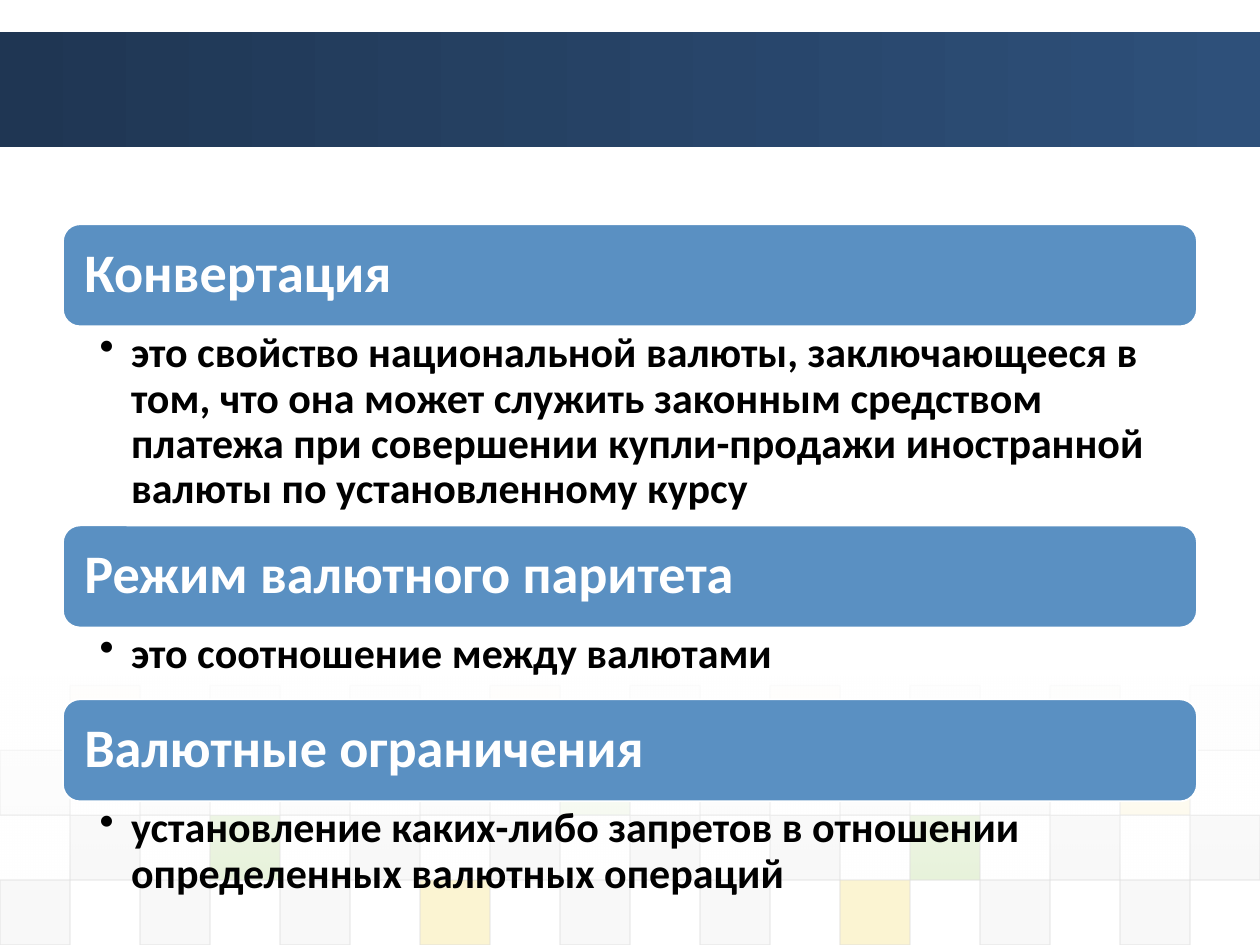
"""Build a slide defining three currency terms over a tiled background."""
from dataclasses import dataclass

from lxml.etree import SubElement
from pptx import Presentation
from pptx.dml.color import RGBColor
from pptx.enum.shapes import MSO_SHAPE as Preset
from pptx.enum.text import MSO_ANCHOR as Anchor, PP_ALIGN as Align
from pptx.oxml.ns import qn
from pptx.util import Inches, Pt

WIDTH, HEIGHT = 10, 7.5
COLORS = {
    "band_start": "1F3653", "band_end": "2E507A", "heading": "5A90C2",
    "white": "FFFFFF", "black": "000000", "edge": "DDDDDD",
    "D": "DDDDDD", "E": "EAEAEA", "G": "8AC246", "Y": "EFC821",
}
FONT = "Calibri"
TILE_COLUMNS = 18
TILE_WIDTH, TILE_HEIGHT = WIDTH / TILE_COLUMNS, 0.515
LEFT, TERM_WIDTH, HEADING_HEIGHT = WIDTH * 0.05, WIDTH * 0.9, 0.81


@dataclass
class TileRow:
    first_column: int
    opacity: int
    tints: str


@dataclass
class Term:
    top: float
    heading: str
    definition: str
    definition_height: float


TILE_ROWS = [
    TileRow(1, 5, "YEEYDYEGE"),
    TileRow(0, 10, "DDDDGDDDY"),
    TileRow(1, 20, "DGDDDDGDD"),
    TileRow(0, 20, "DDDYDDYDD"),
]
TERMS = [
    Term(1.78, "Конвертация",
         "это свойство национальной валюты, заключающееся в том, что она может "
         "служить законным средством платежа при совершении купли-продажи "
         "иностранной валюты по установленному курсу", 1.58),
    Term(4.17, "Режим валютного паритета", "это соотношение между валютами", 0.56),
    Term(5.55, "Валютные ограничения",
         "установление каких-либо запретов в отношении определенных валютных "
         "операций", 0.82),
]


def rgb(name: str) -> RGBColor:
    return RGBColor.from_string(COLORS[name])


def add_block(slide, preset, left: float, top: float, width: float, height: float):
    block = slide.shapes.add_shape(
        preset, Inches(left), Inches(top), Inches(width), Inches(height))
    block.shadow.inherit = False
    return block


def set_opacities(block, *percents: int) -> None:
    for color, percent in zip(block.element.spPr.iter(qn("a:srgbClr")), percents):
        SubElement(color, qn("a:alpha"), val=str(percent * 1000))


def add_gradient(slide, top: float, height: float, names: tuple[str, str], angle: int):
    block = add_block(slide, Preset.RECTANGLE, 0, top, WIDTH, height)
    block.line.fill.background()
    block.fill.gradient()
    block.fill.gradient_angle = angle
    for stop, name, position in zip(block.fill.gradient_stops, names, (0, 1)):
        stop.color.rgb = rgb(name)
        stop.position = position
    return block


def add_tile_row(slide, top: float, row: TileRow) -> None:
    for index, tint in enumerate(row.tints):
        left = (row.first_column + 2 * index) * TILE_WIDTH
        tile = add_block(slide, Preset.RECTANGLE, left, top, TILE_WIDTH, TILE_HEIGHT)
        tile.fill.solid()
        tile.fill.fore_color.rgb = rgb(tint)
        tile.line.color.rgb = rgb("edge")
        tile.line.width = Pt(0.75)
        set_opacities(tile, row.opacity, 60)


def set_text(frame, text: str, size: int, color: str, anchor, insets: tuple) -> None:
    frame.text = text
    frame.word_wrap = True
    frame.vertical_anchor = anchor
    (frame.margin_left, frame.margin_top,
     frame.margin_right, frame.margin_bottom) = map(Inches, insets)
    paragraph = frame.paragraphs[0]
    paragraph.alignment = Align.LEFT
    paragraph.line_spacing = 0.9
    font = paragraph.runs[0].font
    font.name, font.size, font.bold = FONT, Pt(size), True
    font.color.rgb = rgb(color)


def add_bullet(paragraph) -> None:
    paragraph.level = 1
    properties = paragraph._p.get_or_add_pPr()
    properties.set("marL", str(Inches(0.25)))
    properties.set("indent", str(Inches(-0.25)))
    SubElement(properties, qn("a:buChar"), char="•")


def add_term(slide, term: Term) -> None:
    heading = add_block(slide, Preset.ROUNDED_RECTANGLE, LEFT, term.top,
                        TERM_WIDTH, HEADING_HEIGHT)
    heading.fill.solid()
    heading.fill.fore_color.rgb = rgb("heading")
    heading.line.color.rgb = rgb("white")
    heading.line.width = Pt(1)
    set_text(heading.text_frame, term.heading, 31, "white", Anchor.MIDDLE, (0.13,) * 4)

    definition = slide.shapes.add_textbox(
        Inches(LEFT), Inches(term.top + HEADING_HEIGHT),
        Inches(TERM_WIDTH), Inches(term.definition_height))
    set_text(definition.text_frame, term.definition, 24, "black", Anchor.TOP,
             (0.29, 0.04, 0.24, 0.04))
    add_bullet(definition.text_frame.paragraphs[0])


def main() -> None:
    deck = Presentation()
    deck.slide_width, deck.slide_height = Inches(WIDTH), Inches(HEIGHT)
    slide = deck.slides.add_slide(deck.slide_layouts[6])
    slide.background.fill.solid()
    slide.background.fill.fore_color.rgb = rgb("white")

    add_gradient(slide, 0.25, 0.92, ("band_start", "band_end"), 0)
    tiles_top = HEIGHT - len(TILE_ROWS) * TILE_HEIGHT
    for index, row in enumerate(TILE_ROWS):
        add_tile_row(slide, tiles_top + index * TILE_HEIGHT, row)
    veil = add_gradient(slide, 5.37, 1.62, ("white", "white"), 270)
    set_opacities(veil, 90, 0)

    for term in TERMS:
        add_term(slide, term)
    deck.save("out.pptx")


if __name__ == "__main__":
    main()
